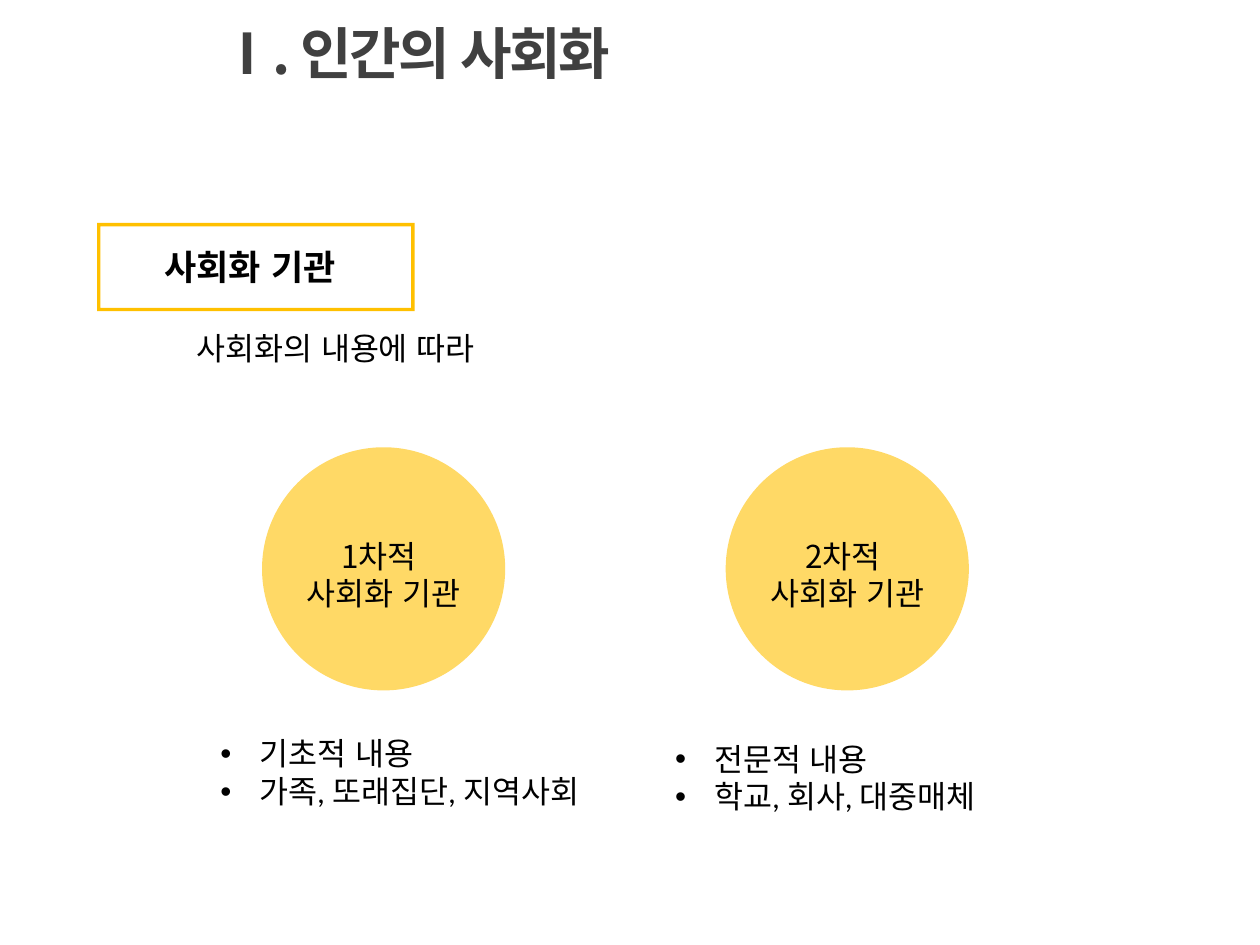
from pptx import Presentation
from pptx.dml.color import RGBColor
from pptx.enum.shapes import MSO_SHAPE
from pptx.enum.text import MSO_ANCHOR, MSO_AUTO_SIZE, PP_ALIGN
from pptx.oxml.ns import qn
from pptx.util import Inches, Pt
from lxml.etree import SubElement

COLORS = {"title": "404040", "text": "000000", "frame": "FFC000", "disc": "FFD966"}
KOREAN = "Noto Sans CJK KR"
LATIN = "Calibri"


class Deck:
    def __init__(self):
        self.show = Presentation()
        self.show.slide_width = Inches(10)
        self.show.slide_height = Inches(7.5)
        self.slide = self.show.slides.add_slide(self.show.slide_layouts[6])

    def color(self, name):
        return RGBColor.from_string(COLORS[name])

    def label(self, shape, lines, size=18, face=LATIN, color="text", bold=False,
              align=PP_ALIGN.LEFT, bullet=False, gap=None, grow=True):
        frame = shape.text_frame
        frame.word_wrap = True
        if grow:
            frame.auto_size = MSO_AUTO_SIZE.SHAPE_TO_FIT_TEXT
            frame.vertical_anchor = MSO_ANCHOR.TOP
        else:
            frame.vertical_anchor = MSO_ANCHOR.MIDDLE
        for i, line in enumerate(lines):
            para = frame.add_paragraph() if i else frame.paragraphs[0]
            para.alignment = align
            if bullet:
                props = para._p.get_or_add_pPr()
                props.set("marL", str(Inches(0.31)))
                props.set("indent", str(-Inches(0.31)))
                SubElement(props, qn("a:buFont")).set("typeface", "Arial")
                SubElement(props, qn("a:buChar")).set("char", "•")
            run = para.add_run()
            run.text = line
            mark = run._r.get_or_add_rPr()
            mark.set("lang", "ko-KR")
            if gap:
                mark.set("spc", str(int(gap * 100)))
            SubElement(mark, qn("a:ea")).set("typeface", KOREAN)
            font = para.font
            font.size = Pt(size)
            font.name = face
            font.bold = bold
            font.color.rgb = self.color(color)

    def text(self, box, lines, **style):
        shape = self.slide.shapes.add_textbox(*map(Inches, box))
        self.label(shape, lines, **style)

    def shape(self, kind, box, fill, home=None):
        shapes = (home or self.slide).shapes
        shape = shapes.add_shape(kind, *map(Inches, box))
        shape.shadow.inherit = False
        shape.fill.solid()
        shape.fill.fore_color.rgb = self.color(fill)
        shape.line.fill.background()
        return shape

    def frame(self, box):
        shape = self.shape(MSO_SHAPE.FRAME, box, "frame")
        shape.adjustments[0] = 0.038

    def disc(self, left, lines):
        group = self.slide.shapes.add_group_shape()
        self.shape(MSO_SHAPE.OVAL, (left, 3.55, 1.93, 1.93), "disc", group)
        plate = self.shape(MSO_SHAPE.RECTANGLE, (left + 0.13, 4.21, 1.67, 0.71), "disc", group)
        self.label(plate, lines, face=KOREAN, align=PP_ALIGN.CENTER)


def main():
    deck = Deck()
    deck.text((1.64, -0.01, 8.02, 0.85), ["Ⅰ. 인간의 사회화"], size=32,
              face=KOREAN, color="title", bold=True, gap=-1.5, grow=False)
    deck.text((0.77, 1.9, 2.43, 0.44), ["사회화 기관"], size=20,
              face=KOREAN, bold=True, align=PP_ALIGN.CENTER)
    deck.frame((0.77, 1.77, 2.52, 0.7))
    deck.text((1.46, 2.56, 4.06, 0.4), ["사회화의 내용에 따라"])

    agents = [
        (2.08, "1차적 ", (1.65, 5.78, 3.37, 0.71), ["기초적 내용", "가족, 또래집단, 지역사회"]),
        (5.76, "2차적 ", (5.26, 5.82, 3.03, 0.71), ["전문적 내용", "학교, 회사, 대중매체"]),
    ]
    for left, rank, box, notes in agents:
        deck.disc(left, [rank, "사회화 기관"])
        deck.text(box, notes, bullet=True)

    deck.show.save("out.pptx")


if __name__ == "__main__":
    main()
